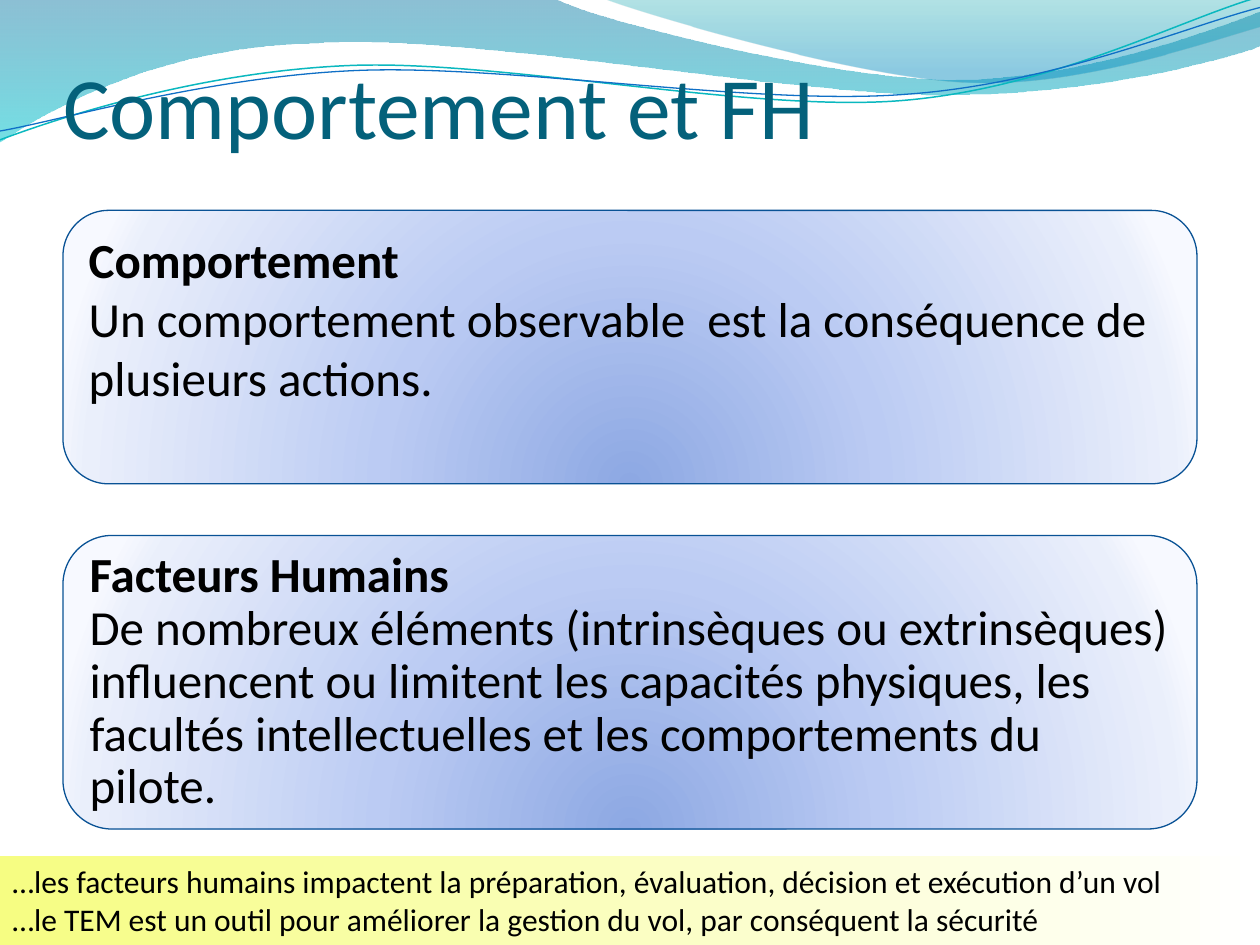
"""Build the slide on behaviour and human factors, with its wave header and two panels."""
from math import cos, radians, sin
from lxml.etree import SubElement
from pptx import Presentation
from pptx.dml.color import RGBColor
from pptx.enum.shapes import MSO_SHAPE as Preset
from pptx.enum.text import MSO_ANCHOR as Anchor, MSO_AUTO_SIZE as AutoSize, PP_ALIGN as Align
from pptx.oxml.ns import qn
from pptx.util import Inches, Pt

COLORS = {
    "title": "04617B", "text": "000000", "panel_line": "095295",
    "wave_blue": "0074A1", "wave_cyan": "00C6CF", "crest_teal": "00A1A9", "crest_blue": "008BBF",
    "strand_teal": "0AB8BF", "strand_blue": "0F6FC6",
    "panel_core": "8DA8E3", "panel_mid": "BBCBF3", "panel_pale": "EAEFFB", "panel_edge": "F7F9FF",
    "bar_yellow": "F6FD82", "bar_white": "FFFFFF",
}
TILT = 2.7


def set_gradient(shape, stops, angle=None):
    shape.fill.background()
    properties = shape._element.spPr
    gradient = properties.makeelement(qn("a:gradFill"), {"rotWithShape": "1"})
    stop_list = SubElement(gradient, qn("a:gsLst"))
    for position, color, alpha in stops:
        stop = SubElement(stop_list, qn("a:gs"), pos=str(position * 1000))
        tint = SubElement(stop, qn("a:srgbClr"), val=COLORS[color])
        if alpha < 100:
            SubElement(tint, qn("a:alpha"), val=str(alpha * 1000))
    if angle is None:
        focus = SubElement(gradient, qn("a:path"), path="circle")
        SubElement(focus, qn("a:fillToRect"), l="50000", t="130000", r="50000", b="-30000")
    else:
        SubElement(gradient, qn("a:lin"), ang=str(angle * 60000), scaled="0")
    properties.replace(properties.find(qn("a:noFill")), gradient)


def add_wave(shapes, start, segments, closed):
    points = [start]
    for segment in segments:
        points.extend(zip(segment[::2], segment[1::2]))
    emu = [(Inches(x), Inches(y)) for x, y in points]
    builder = shapes.build_freeform(*emu[0])
    builder.add_line_segments(emu[1:], close=closed)
    wave = builder.convert_to_shape()
    wave.shadow.inherit = False
    nodes = iter(list(wave._element.spPr.iter(qn("a:lnTo"))))
    for segment in segments:
        node = next(nodes)
        if len(segment) == 6:
            curve = node.makeelement(qn("a:cubicBezTo"), {})
            node.addprevious(curve)
            for corner in (node, next(nodes), next(nodes)):
                curve.append(corner[0])
                corner.getparent().remove(corner)
    return wave


prs = Presentation()
prs.slide_width, prs.slide_height = Inches(10), Inches(7.5)
slide = prs.slides.add_slide(prs.slide_layouts[5])
shapes = slide.shapes

BANDS = [
    ((0, 0),
     [(4.4, -0.01), (4.76, 0.17, 6.64, 0.63, 7.58, 0.63), (8.53, 0.63, 9.58, 0.26, 10, 0.09),
      (10.01, 0.36), (9.83, 0.44, 8.7, 0.76, 7.46, 0.75), (6.22, 0.75, 3.82, 0.28, 2.57, 0.34),
      (1.29, 0.36, 0.46, 0.83, -0.01, 1.13)],
     [(0, "wave_blue", 45), (100, "wave_cyan", 55)]),
    ((4.79, -0.01),
     [(5.09, 0.11, 6.82, 0.62, 7.69, 0.65), (8.56, 0.69, 9.61, 0.32, 10, 0.21), (10, 0)],
     [(0, "crest_teal", 30), (80, "crest_blue", 45)]),
]
for start, segments, stops in BANDS:
    band = add_wave(shapes, start, segments, True)
    set_gradient(band, stops, 90)
    band.line.fill.background()

STRANDS = [
    ((0, 1.11),
     [(0.48, 0.93, 1.58, 0.57, 2.77, 0.52), (3.95, 0.47, 5.93, 0.89, 7.13, 0.8),
      (8.33, 0.71, 9.38, 0.15, 9.98, -0.02)], (4.99, 0.58), "strand_teal", 0.85),
    ((0, 1.04),
     [(0.47, 0.96, 1.64, 0.61, 2.83, 0.56), (4.03, 0.51, 5.97, 0.84, 7.17, 0.75),
      (8.36, 0.67, 9.41, 0.21, 10, 0.06)], (5, 0.59), "strand_blue", 0.75),
]
c, s = cos(radians(TILT)), sin(radians(TILT))
for start, segments, (cx, cy), color, width in STRANDS:
    level = []
    for segment in [start, *segments]:
        level.append([])
        for x, y in zip(segment[::2], segment[1::2]):
            level[-1] += [cx + (x - cx) * c - (y - cy) * s, cy + (x - cx) * s + (y - cy) * c]
    strand = add_wave(shapes, level[0], level[1:], False)
    strand.rotation = -TILT
    strand.fill.background()
    strand.line.color.rgb = RGBColor.from_string(COLORS[color])
    strand.line.width = Pt(width)

title = shapes.title
shapes._spTree.append(title._element)
title.left, title.top, title.width, title.height = Inches(0.5), Inches(0), Inches(9), Inches(1.25)
title.text = "Comportement et FH"
title_format = {
    "auto_size": AutoSize.NONE, "vertical_anchor": Anchor.BOTTOM, "margin_left": 0,
    "margin_top": Inches(0.05), "margin_right": 0, "margin_bottom": 0,
}
for name, value in title_format.items():
    setattr(title.text_frame, name, value)
heading = title.text_frame.paragraphs[0]
heading.alignment = Align.LEFT
heading.font.size, heading.font.name = Pt(50), "Calibri"
heading.font.color.rgb = RGBColor.from_string(COLORS["title"])

PANEL_STOPS = [(0, "panel_core", 100), (43, "panel_mid", 100),
               (93, "panel_pale", 100), (100, "panel_edge", 100)]
BAR_STOPS = [(0, "bar_yellow", 100), (100, "bar_white", 100)]
BLOCKS = [
    {"preset": Preset.ROUNDED_RECTANGLE, "box": (0.5, 1.67, 9, 2.17), "stops": PANEL_STOPS,
     "angle": None, "line": "panel_line", "anchor": Anchor.TOP, "spacing": 1.0, "size": 28,
     "texts": [("Comportement", True),
               ("Un comportement observable  est la conséquence de plusieurs actions.", False)]},
    {"preset": Preset.ROUNDED_RECTANGLE, "box": (0.5, 4.25, 9, 2.33), "stops": PANEL_STOPS,
     "angle": None, "line": "panel_line", "anchor": Anchor.MIDDLE, "spacing": 0.9, "size": 28,
     "texts": [("Facteurs Humains", True),
               ("De nombreux éléments (intrinsèques ou extrinsèques) influencent ou limitent "
                "les capacités physiques, les facultés intellectuelles et les comportements "
                "du pilote.", False)]},
    {"preset": Preset.RECTANGLE, "box": (0, 6.79, 10, 0.71), "stops": BAR_STOPS,
     "angle": 0, "line": None, "anchor": Anchor.TOP, "spacing": 1.0, "size": 18,
     "texts": [("…les facteurs humains impactent la préparation, évaluation, décision et "
                "exécution d’un vol", False),
               ("…le TEM est un outil pour améliorer la gestion du vol, par conséquent la "
                "sécurité", False)]},
]
for block in BLOCKS:
    panel = shapes.add_shape(block["preset"], *map(Inches, block["box"]))
    panel.shadow.inherit = False
    set_gradient(panel, block["stops"], block["angle"])
    if block["line"]:
        panel.line.color.rgb = RGBColor.from_string(COLORS[block["line"]])
        panel.line.width = Pt(0.75)
    else:
        panel.line.fill.background()
    frame = panel.text_frame
    frame.word_wrap = True
    frame.vertical_anchor = block["anchor"]
    for index, (text, bold) in enumerate(block["texts"]):
        paragraph = frame.add_paragraph() if index else frame.paragraphs[0]
        paragraph.alignment = Align.LEFT
        paragraph.line_spacing = block["spacing"]
        run = paragraph.add_run()
        run.text = text
        for name, value in {"name": "Calibri", "size": Pt(block["size"]), "bold": bold}.items():
            setattr(run.font, name, value)
        run.font.color.rgb = RGBColor.from_string(COLORS["text"])

prs.save("out.pptx")
